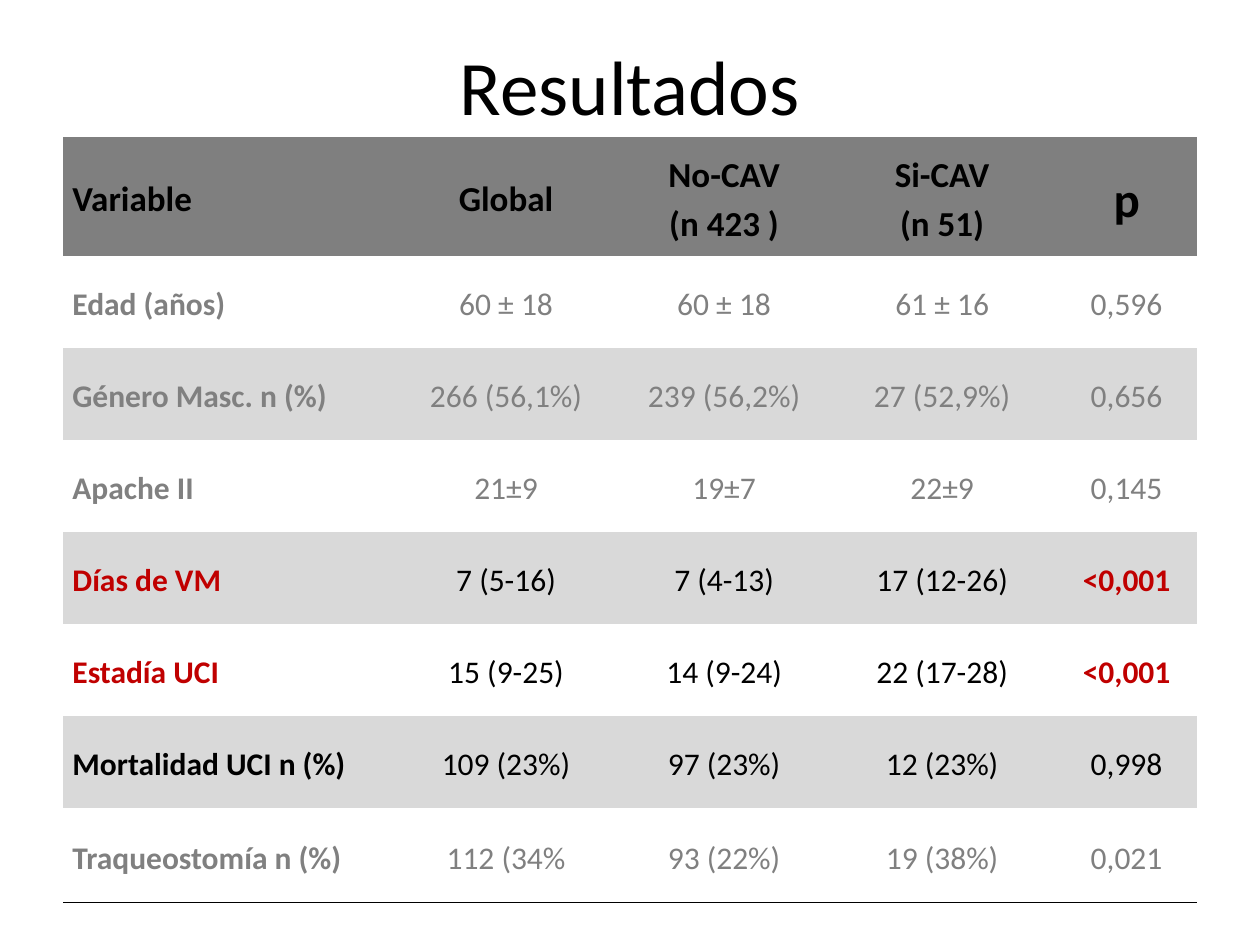
from dataclasses import dataclass

from lxml import etree
from pptx import Presentation
from pptx.dml.color import RGBColor
from pptx.enum.text import MSO_ANCHOR, PP_ALIGN
from pptx.oxml.ns import qn
from pptx.util import Pt

MIDDLE = MSO_ANCHOR.MIDDLE
LEFT = PP_ALIGN.LEFT
CENTER = PP_ALIGN.CENTER
TITLE_ONLY_LAYOUT = 5
PLAIN_TABLE_STYLE = "{2D5ABB26-0587-4C30-8999-92F81FD0307C}"


@dataclass(frozen=True)
class Theme:
    font: str = "Calibri"
    black: str = "000000"
    muted: str = "808080"
    accent: str = "C00000"
    header_fill: str = "7F7F7F"
    band_fill: str = "D9D9D9"
    title_size: int = 44
    p_size: int = 28
    header_size: int = 20
    body_size: int = 18
    line_spacing: float = 1.15
    cell_margin: float = 5.4
    rule_width: float = 0.75


THEME = Theme()
COLUMN_WIDTHS = [188, 130.4, 118.8, 130.4, 80.4]
ROW_HEIGHTS = [68] + [52.6] * 6 + [54]
HEADERS = ["Variable", "Global", "No-CAV\n(n 423 )", "Si-CAV\n(n 51)", "p"]
MUTED_ROW = (THEME.muted, THEME.muted)
SIGNIFICANT_ROW = (THEME.accent, THEME.black)
PLAIN_ROW = (THEME.black, THEME.black)
RESULTS = [
    (MUTED_ROW, ["Edad (años)", "60 ± 18", "60 ± 18", "61 ± 16", "0,596"]),
    (MUTED_ROW, ["Género Masc. n (%)", "266 (56,1%)", "239 (56,2%)", "27 (52,9%)", "0,656"]),
    (MUTED_ROW, ["Apache II", "21±9", "19±7", "22±9", "0,145"]),
    (SIGNIFICANT_ROW, ["Días de VM", "7 (5-16)", "7 (4-13)", "17 (12-26)", "<0,001"]),
    (SIGNIFICANT_ROW, ["Estadía UCI", "15 (9-25)", "14 (9-24)", "22 (17-28)", "<0,001"]),
    (PLAIN_ROW, ["Mortalidad UCI n (%)", "109 (23%)", "97 (23%)", "12 (23%)", "0,998"]),
    (MUTED_ROW, ["Traqueostomía n (%)", "112 (34%", "93 (22%)", "19 (38%)", "0,021"]),
]
BANDED_ROWS = {2, 4, 6}


def apply_format(target, values):
    for name, value in values.items():
        setattr(target, name, value)


class SlideBuilder:
    def __init__(self, slide, theme):
        self.slide = slide
        self.theme = theme

    def fill_text(self, text_frame, text, size, color, bold, alignment, line_spacing=None):
        text_frame.text = text
        for paragraph in text_frame.paragraphs:
            apply_format(paragraph, {"alignment": alignment, "line_spacing": line_spacing})
            font = paragraph.runs[0].font
            apply_format(font, {"name": self.theme.font, "size": Pt(size), "bold": bold})
            font.color.rgb = RGBColor.from_string(color)

    def title(self, text, left, top, width, height):
        shape = self.slide.shapes.title
        apply_format(shape, {
            "left": Pt(left), "top": Pt(top), "width": Pt(width), "height": Pt(height),
        })
        shape.text_frame.vertical_anchor = MIDDLE
        self.fill_text(shape.text_frame, text, self.theme.title_size, self.theme.black,
                       False, CENTER)

    def table(self, left, top, column_widths, row_heights):
        shape = self.slide.shapes.add_table(
            len(row_heights), len(column_widths),
            Pt(left), Pt(top), Pt(sum(column_widths)), Pt(sum(row_heights)),
        )
        table = shape.table
        apply_format(table, {"first_row": False, "horz_banding": False})
        table._tbl.tblPr.find(qn("a:tableStyleId")).text = PLAIN_TABLE_STYLE
        for column, width in zip(table.columns, column_widths):
            column.width = Pt(width)
        for row, height in zip(table.rows, row_heights):
            row.height = Pt(height)
        return table

    def cell(self, cell, text, size, color, bold, alignment, fill=None):
        margin = Pt(self.theme.cell_margin)
        apply_format(cell, {
            "margin_left": margin, "margin_right": margin,
            "margin_top": margin, "margin_bottom": margin,
            "vertical_anchor": MIDDLE,
        })
        if fill:
            cell.fill.solid()
            cell.fill.fore_color.rgb = RGBColor.from_string(fill)
        else:
            cell.fill.background()
        self.fill_text(cell.text_frame, text, size, color, bold, alignment,
                       self.theme.line_spacing)

    def bottom_rule(self, cell):
        line = etree.Element(qn("a:lnB"), w=str(Pt(self.theme.rule_width)))
        fill = etree.SubElement(line, qn("a:solidFill"))
        etree.SubElement(fill, qn("a:srgbClr"), val=self.theme.black)
        cell._tc.get_or_add_tcPr().insert(0, line)


def main():
    presentation = Presentation()
    apply_format(presentation, {"slide_width": Pt(720), "slide_height": Pt(540)})
    slide = presentation.slides.add_slide(presentation.slide_layouts[TITLE_ONLY_LAYOUT])
    builder = SlideBuilder(slide, THEME)

    builder.title("Resultados", 36, 9.4, 648, 77.8)
    table = builder.table(36, 78.4, COLUMN_WIDTHS, ROW_HEIGHTS)

    for column, text in enumerate(HEADERS):
        size = THEME.p_size if text == "p" else THEME.header_size
        alignment = CENTER if column else LEFT
        builder.cell(table.cell(0, column), text, size, THEME.black, True, alignment,
                     THEME.header_fill)

    for row, ((label_color, value_color), texts) in enumerate(RESULTS, start=1):
        fill = THEME.band_fill if row in BANDED_ROWS else None
        for column, text in enumerate(texts):
            significant = text.startswith("<")
            emphasized = column == 0 or significant
            color = label_color if emphasized else value_color
            alignment = CENTER if column else LEFT
            builder.cell(table.cell(row, column), text, THEME.body_size, color, emphasized,
                         alignment, fill)

    for column in range(len(COLUMN_WIDTHS)):
        builder.bottom_rule(table.cell(len(RESULTS), column))

    presentation.save("out.pptx")


if __name__ == "__main__":
    main()
